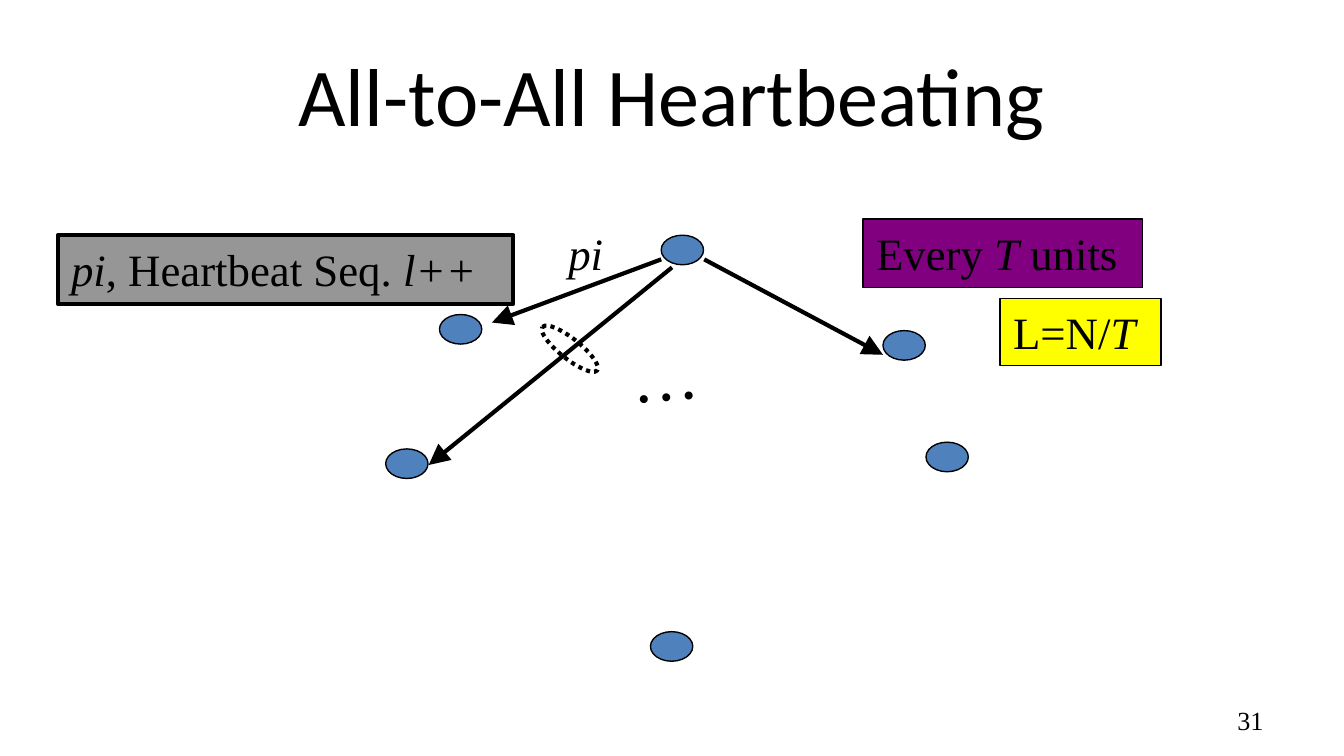
from collections import namedtuple

from lxml.etree import SubElement
from pptx import Presentation
from pptx.dml.color import RGBColor
from pptx.enum.dml import MSO_LINE as Dash
from pptx.enum.shapes import MSO_CONNECTOR as Connector, MSO_SHAPE as Shape
from pptx.enum.text import MSO_ANCHOR as Anchor, PP_ALIGN as Align
from pptx.oxml.ns import qn
from pptx.util import Inches, Pt

BLACK = RGBColor(0x00, 0x00, 0x00)
BLUE = RGBColor(0x4F, 0x81, 0xBD)
GRAY = RGBColor(0x96, 0x96, 0x96)
PURPLE = RGBColor(0x80, 0x00, 0x80)
YELLOW = RGBColor(0xFF, 0xFF, 0x00)

SLIDE_W = Inches(10)
SLIDE_H = SLIDE_W * 9 // 16
COLUMN, ROW = SLIDE_W / 100, SLIDE_H / 56.25
THIN, THICK = Pt(0.75), Pt(2.25)
ARROWHEAD = {"type": "triangle", "w": "lg", "len": "lg"}

TITLE = {"name": "Calibri", "size": Pt(44)}
BODY = {"name": "Times New Roman", "size": Pt(24)}
DOTS = BODY | {"size": Pt(36)}
NUMBER = BODY | {"size": Pt(14)}

Box = namedtuple("Box", "left top width height")


def within(box, left, top, width=0, height=0):
    """Return a box whose corner is offset from that of the given box."""
    return Box(box.left + left, box.top + top, width, height)


def lengths(box):
    """Convert a box from grid columns and rows to slide lengths."""
    return [round(value * unit) for value, unit in zip(box, (COLUMN, ROW) * 2)]


def write(holder, runs, style, align=Align.LEFT, anchor=Anchor.TOP, wrap=False):
    """Fill a holder with (text, italic) runs in one style."""
    frame = holder.text_frame
    for name, value in {"word_wrap": wrap, "vertical_anchor": anchor}.items():
        setattr(frame, name, value)
    paragraph = frame.paragraphs[0]
    paragraph.alignment = align
    for text, italic in runs:
        run = paragraph.add_run()
        run.text = text
        run.font.color.rgb = BLACK
        for name, value in (style | {"italic": italic}).items():
            setattr(run.font, name, value)


def add_text(slide, box, runs, style, **layout):
    """Place a text box and return it."""
    holder = slide.shapes.add_textbox(*lengths(box))
    write(holder, runs, style, **layout)
    return holder


def add_outlined(slide, box, kind, fill, width):
    """Place a black-outlined shape, unfilled when fill is None."""
    shape = slide.shapes.add_shape(kind, *lengths(box))
    shape.shadow.inherit = False
    if fill is None:
        shape.fill.background()
    else:
        shape.fill.solid()
        shape.fill.fore_color.rgb = fill
    shape.line.color.rgb = BLACK
    shape.line.width = width
    return shape


def add_arrow(slide, box, start, end):
    """Draw an arrow between two points of a box."""
    ends = [lengths(within(box, *point))[:2] for point in (start, end)]
    arrow = slide.shapes.add_connector(Connector.STRAIGHT, *ends[0], *ends[1])
    arrow.line.color.rgb = BLACK
    arrow.line.width = THICK
    SubElement(arrow.line._get_or_add_ln(), qn("a:tailEnd"), ARROWHEAD)
    SubElement(arrow._element.spPr, qn("a:effectLst"))


def add_processes(slide, box):
    """Place the ring of processes."""
    for corner in ((37, 7.1), (4, 5.9), (0, 15.9), (40.2, 15.4),
                   (20.5, 0), (19.7, 29.5)):
        add_outlined(slide, within(box, *corner, 3.15, 2.2), Shape.OVAL, BLUE, THIN)


def add_heartbeats(slide, box):
    """Draw the heartbeats that the sender pi sends to the others."""
    for start, end in (((21.3, 2.4), (3.2, 17.1)),
                       ((20.5, 1.8), (7.9, 6.5)),
                       ((23.7, 1.8), (37, 8.9))):
        add_arrow(slide, box, start, end)
    bundle = add_outlined(slide, within(box, 11.1, 7.7, 5.2, 1.5),
                          Shape.OVAL, None, THICK)
    bundle.rotation = 38.5
    bundle.line.dash_style = Dash.ROUND_DOT
    more = add_text(slide, within(box, 17.3, 6.8, 7.1, 7.1), [("…", False)], DOTS)
    more.rotation = 355.4
    add_text(slide, within(box, 12.6, -1.2, 6.1, 5.1), [("pi", True)], BODY)


def add_labels(slide, box):
    """Place the message, period and load labels."""
    message = [("pi", True), (", Heartbeat Seq. ", False), ("l++", True)]
    period = [("Every ", False), ("T", True), (" units", False)]
    load = [("L=N/", False), ("T", True)]
    for place, fill, width, runs in (
        ((0, 1.2, 33.9, 5.1), GRAY, THICK, message),
        ((59.9, 0, 20.8, 5.1), PURPLE, THIN, period),
        ((70.1, 5.9, 12, 5), YELLOW, THIN, load),
    ):
        label = add_outlined(slide, within(box, *place), Shape.RECTANGLE, fill, width)
        write(label, runs, BODY)


def main():
    """Build and save the heartbeating slide."""
    deck = Presentation()
    deck.slide_width, deck.slide_height = SLIDE_W, SLIDE_H
    slide = deck.slides.add_slide(deck.slide_layouts[6])
    ring = Box(28.7, 17.5, 43.3, 31.7)
    add_text(slide, Box(71.7, 52.1, 23.3, 3), [("31", False)], NUMBER,
             align=Align.RIGHT, anchor=Anchor.MIDDLE, wrap=True)
    add_text(slide, Box(5, 2.3, 90, 9.4), [("All-to-All Heartbeating", False)], TITLE,
             align=Align.CENTER, anchor=Anchor.MIDDLE, wrap=True)
    add_processes(slide, ring)
    add_heartbeats(slide, ring)
    add_labels(slide, Box(4.3, 16.3, 82.1, 10.9))
    deck.save("out.pptx")


if __name__ == "__main__":
    main()
